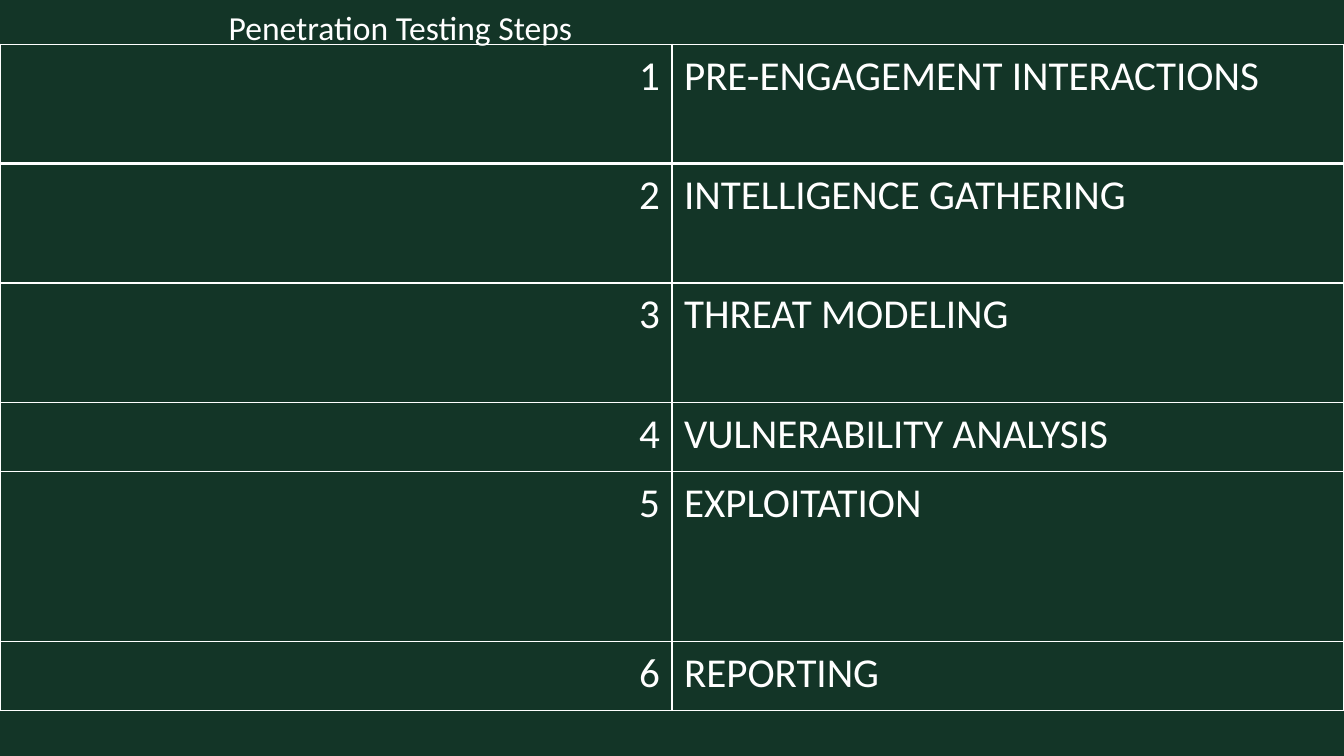
import pptx
import pptx.dml.color
import pptx.enum.text
import pptx.oxml
import pptx.oxml.ns
import pptx.util

Pt = pptx.util.Pt
COLORS = {"background": "133527", "text": "FFFFFF", "border": "FFFFFF"}
FONT = "Calibri"
STEPS = [
    ("PRE-ENGAGEMENT INTERACTIONS", 64),
    ("INTELLIGENCE GATHERING", 64),
    ("THREAT MODELING", 64),
    ("VULNERABILITY ANALYSIS", 37),
    ("EXPLOITATION", 91),
    ("REPORTING", 37),
]
SLIDE_WIDTH = 720
SIDE_MARGIN = 6.5
THIN, THICK = 0.96, 1.98


def style_text(paragraph, size, alignment):
    paragraph.alignment = alignment
    paragraph.font.name = FONT
    paragraph.font.size = Pt(size)
    paragraph.font.bold = False
    paragraph.font.color.rgb = pptx.dml.color.RGBColor.from_string(COLORS["text"])


def add_border(cell, side, width):
    """Draw one side (L, R, T or B) of a cell; call before setting its fill."""
    cell._tc.get_or_add_tcPr().append(pptx.oxml.parse_xml(
        f'<a:ln{side} {pptx.oxml.ns.nsdecls("a")} w="{Pt(width)}">'
        f'<a:solidFill><a:srgbClr val="{COLORS["border"]}"/></a:solidFill>'
        f'</a:ln{side}>'))


presentation = pptx.Presentation()
presentation.slide_width = Pt(SLIDE_WIDTH)
presentation.slide_height = Pt(405)
slide = presentation.slides.add_slide(presentation.slide_layouts[5])
background = pptx.dml.color.RGBColor.from_string(COLORS["background"])
slide.background.fill.solid()
slide.background.fill.fore_color.rgb = background
LEFT = pptx.enum.text.PP_ALIGN.LEFT
RIGHT = pptx.enum.text.PP_ALIGN.RIGHT

# Steps table
table = slide.shapes.add_table(
    len(STEPS), 2, 0, Pt(23.76), Pt(SLIDE_WIDTH),
    Pt(sum(height for _, height in STEPS))).table
table.first_row = False
table.horz_banding = False

for row, (step, height) in enumerate(STEPS):
    table.rows[row].height = Pt(height)
    top = THICK if row == 1 else THIN
    bottom = THICK if row == 0 else THIN
    for column, (text, alignment) in enumerate([(str(row + 1), RIGHT), (step, LEFT)]):
        cell = table.cell(row, column)
        cell.text = text
        cell.margin_left = cell.margin_right = Pt(SIDE_MARGIN)
        style_text(cell.text_frame.paragraphs[0], 22, alignment)
        for side, width in [("L", THIN), ("R", THIN), ("T", top), ("B", bottom)]:
            add_border(cell, side, width)
        cell.fill.solid()
        cell.fill.fore_color.rgb = background

# Title, brought in front of the table
title = slide.shapes.title
title.left, title.top, title.width, title.height = Pt(116), Pt(0), Pt(200), Pt(28)
title_frame = title.text_frame
title_frame.text = "Penetration Testing Steps"
title_frame.word_wrap = True
title_frame.auto_size = pptx.enum.text.MSO_AUTO_SIZE.NONE
title_frame.vertical_anchor = pptx.enum.text.MSO_ANCHOR.TOP
title_frame.margin_left = title_frame.margin_right = Pt(SIDE_MARGIN)
title_frame.margin_top = title_frame.margin_bottom = Pt(3.5)
style_text(title_frame.paragraphs[0], 18, LEFT)
title.element.getparent().append(title.element)

presentation.save("out.pptx")
